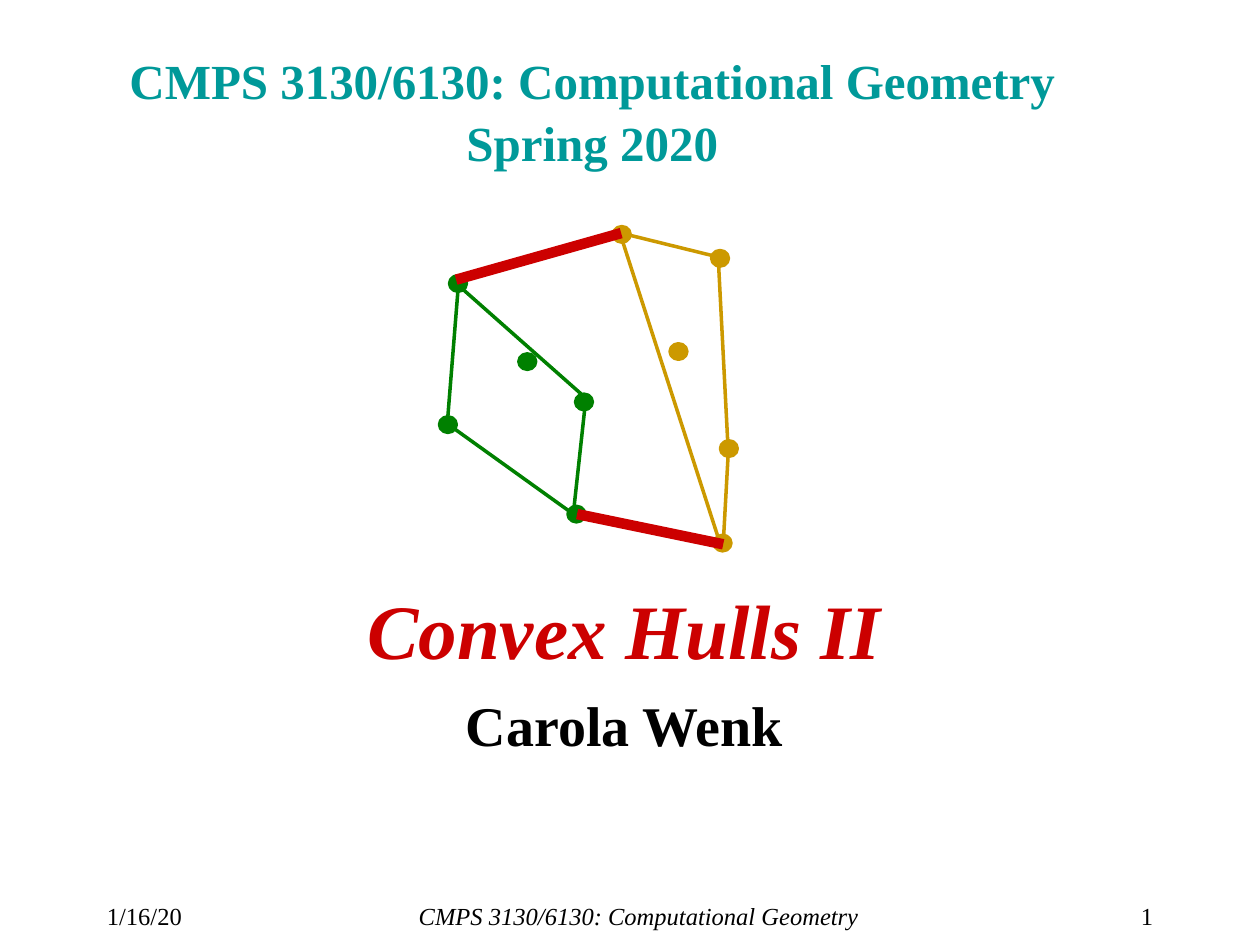
import pptx
import pptx.dml.color
import pptx.enum.shapes
import pptx.enum.text
import pptx.util
from dataclasses import dataclass
from pptx.util import Inches

ALIGN = pptx.enum.text.PP_ALIGN
ANCHOR = pptx.enum.text.MSO_ANCHOR


@dataclass(frozen=True)
class Theme:
    font: str = "Times New Roman"
    teal: str = "009999"
    red: str = "CC0000"
    green: str = "008000"
    gold: str = "CC9900"
    black: str = "000000"
    title: int = 28
    topic: int = 44
    author: int = 32
    footer: int = 14
    outline: float = 2.25
    edge: int = 2
    tangent: int = 6


T = Theme()


def rgb(color):
    return pptx.dml.color.RGBColor.from_string(color)


def add_box(s, x, y, w, h, top=0.05, bottom=0.05, anchor=ANCHOR.TOP):
    tf = s.shapes.add_textbox(Inches(x), Inches(y), Inches(w), Inches(h)).text_frame
    tf.word_wrap = True
    tf.margin_top, tf.margin_bottom = Inches(top), Inches(bottom)
    tf.vertical_anchor = anchor
    return tf


def write(p, text, size, color=T.black, align=ALIGN.CENTER, bold=False, italic=False):
    p.alignment = align
    for i, line in enumerate(text.split("\n")):
        if i:
            p.add_line_break()
        r = p.add_run()
        r.text = line
        r.font.name, r.font.size = T.font, pptx.util.Pt(size)
        r.font.bold, r.font.italic = bold, italic
        r.font.color.rgb = rgb(color)
    return p


def add_title(s, x, y, w, h):
    # The bottom inset lifts the two lines above the middle of the box
    tf = add_box(s, x, y, w, h, top=0, bottom=0.42, anchor=ANCHOR.MIDDLE)
    p = write(tf.paragraphs[0], "CMPS 3130/6130: Computational Geometry\nSpring 2020",
              T.title, T.teal, bold=True)
    p.line_spacing = 1.05


def add_subtitle(s, x, y, w, h):
    tf = add_box(s, x, y, w, h, top=0.12)
    write(tf.paragraphs[0], "Convex Hulls II", T.topic, T.red, bold=True, italic=True)
    p = write(tf.add_paragraph(), "Carola Wenk", T.author, bold=True)
    p.space_before = pptx.util.Pt(9)


def add_footer(s, x, y, w, h):
    # Offset from the left edge, width, text, alignment, italic
    parts = [(0, 0.95, "1/16/20", ALIGN.LEFT, False),
             (1.15, 6.34, "CMPS 3130/6130: Computational Geometry", ALIGN.CENTER, True),
             (w - 0.82, 0.82, "1", ALIGN.RIGHT, False)]
    for dx, width, text, align, italic in parts:
        tf = add_box(s, x + dx, y, width, h, top=0.07, bottom=0)
        write(tf.paragraphs[0], text, T.footer, align=align, italic=italic)


def add_point(s, x, y, color):
    sp = s.shapes.add_shape(pptx.enum.shapes.MSO_SHAPE.OVAL,
                            Inches(x), Inches(y), Inches(0.13), Inches(0.12))
    sp.shadow.inherit = False
    sp.fill.solid()
    sp.fill.fore_color.rgb = rgb(color)
    sp.line.color.rgb = rgb(color)
    sp.line.width = pptx.util.Pt(T.outline)


def add_edge(s, start, end, color, width):
    c = s.shapes.add_connector(pptx.enum.shapes.MSO_CONNECTOR.STRAIGHT,
                               *(Inches(v) for v in start + end))
    c.line.color.rgb = rgb(color)
    c.line.width = pptx.util.Pt(width)
    effects = pptx.oxml.xmlchemy.OxmlElement("a:effectLst")
    c._element.spPr.append(effects)


def add_hulls(s, x, y):
    # Top left corners of the points, relative to the figure
    points = {
        T.green: [(0.08, 0.39), (0, 1.51), (1.02, 2.22), (0.63, 1.01), (1.08, 1.33)],
        T.gold: [(1.38, 0), (1.83, 0.93), (2.16, 0.19), (2.23, 1.7), (2.18, 2.45)],
    }
    # Edges of the left hull, the right hull, and the tangents that merge them
    edges = [
        (T.green, T.edge, [((0.15, 0.44), (0.06, 1.56)), ((0.07, 1.57), (1.06, 2.28)),
                           ((1.06, 2.28), (1.16, 1.36)), ((1.16, 1.36), (0.12, 0.44))]),
        (T.gold, T.edge, [((1.44, 0.08), (2.24, 2.56)), ((2.25, 2.52), (2.29, 1.79)),
                          ((2.29, 1.79), (2.21, 0.24)), ((2.21, 0.24), (1.44, 0.05))]),
        (T.red, T.tangent, [((0.13, 0.42), (1.44, 0.05)), ((1.09, 2.28), (2.25, 2.52))]),
    ]
    for color, corners in points.items():
        for dx, dy in corners:
            add_point(s, x + dx, y + dy, color)
    for color, width, lines in edges:
        for (x1, y1), (x2, y2) in lines:
            add_edge(s, (x + x1, y + y1), (x + x2, y + y2), color, width)


def main():
    prs = pptx.Presentation()
    prs.slide_width, prs.slide_height = Inches(10), Inches(7.5)
    s = prs.slides.add_slide(prs.slide_layouts[6])
    add_footer(s, 0.75, 7.08, 8.5, 0.25)
    add_title(s, 0.24, 0.54, 8.92, 1.08)
    add_subtitle(s, 0.33, 4.5, 9.25, 1.67)
    add_hulls(s, 3.49, 1.8)
    prs.save("out.pptx")


if __name__ == "__main__":
    main()
